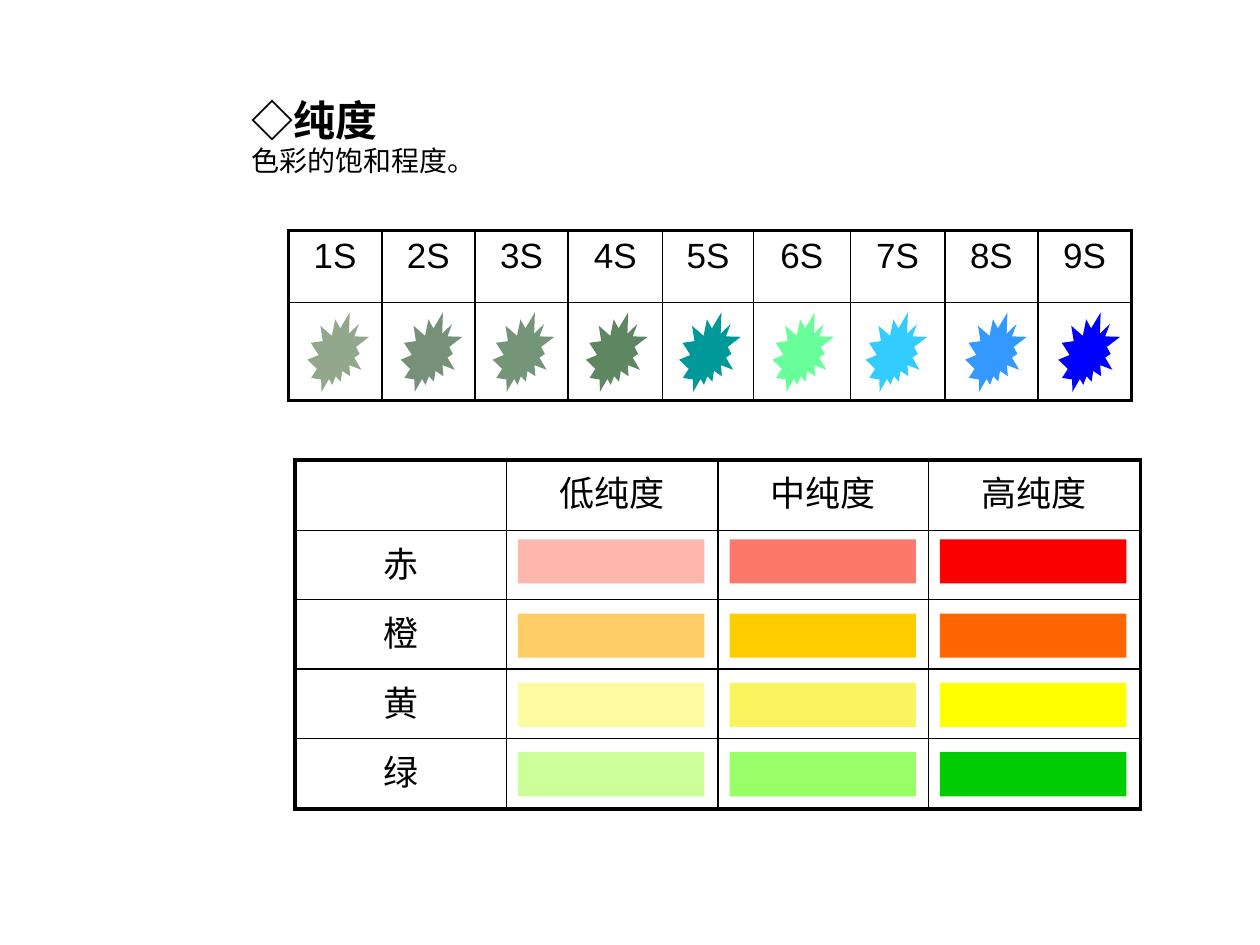
from dataclasses import dataclass

from lxml import etree
from pptx import Presentation
from pptx.dml.color import RGBColor
from pptx.enum.shapes import MSO_SHAPE
from pptx.enum.text import PP_ALIGN
from pptx.oxml.ns import qn
from pptx.util import Inches, Pt

CENTER = PP_ALIGN.CENTER
JUSTIFY = PP_ALIGN.JUSTIFY
SEAL = MSO_SHAPE.EXPLOSION2
RECTANGLE = MSO_SHAPE.RECTANGLE
THIN, THICK = Pt(1), Pt(2.25)
COLORS = {
    "ink": "000000",
    "1S": "92A78B", "2S": "76907A", "3S": "759578", "4S": "5E8660", "5S": "009999",
    "6S": "66FF99", "7S": "33CCFF", "8S": "3399FF", "9S": "0000FF",
    "赤低纯度": "FDB7AD", "赤中纯度": "FC786A", "赤高纯度": "FC0000",
    "橙低纯度": "FFCC66", "橙中纯度": "FFCC00", "橙高纯度": "FF6600",
    "黄低纯度": "FDFB9F", "黄中纯度": "F9F45D", "黄高纯度": "FFFF00",
    "绿低纯度": "CCFF99", "绿中纯度": "99FF66", "绿高纯度": "00CC00",
}
GRADES = [f"{grade}S" for grade in range(1, 10)]
LEVELS = ["低纯度", "中纯度", "高纯度"]
HUES = ["赤", "橙", "黄", "绿"]


@dataclass
class Grid:
    left: float
    top: float
    widths: list[float]
    heights: list[float]
    rows: list[list[str]]


@dataclass
class Heading:
    text: str
    size: int
    font: str
    bold: bool


def rgb(name: str) -> RGBColor:
    return RGBColor.from_string(COLORS[name])


def add_border(cell, side: str, width: int) -> None:
    line = etree.SubElement(cell._tc.get_or_add_tcPr(), qn(f"a:ln{side}"), w=str(width))
    fill = etree.SubElement(line, qn("a:solidFill"))
    etree.SubElement(fill, qn("a:srgbClr"), val=COLORS["ink"])


def add_grid(slide, grid: Grid) -> None:
    """Draw an unfilled table with a thick frame and thin inner rules."""
    last_row, last_column = len(grid.heights) - 1, len(grid.widths) - 1
    table = slide.shapes.add_table(
        last_row + 1, last_column + 1, Inches(grid.left), Inches(grid.top),
        Inches(sum(grid.widths)), Inches(sum(grid.heights))).table
    table.first_row = table.horz_banding = False
    for column, width in zip(table.columns, grid.widths):
        column.width = Inches(width)
    for row, height in zip(table.rows, grid.heights):
        row.height = Inches(height)
    for r, labels in enumerate(grid.rows):
        for c, label in enumerate(labels):
            cell = table.cell(r, c)
            outer_sides = {"L": c == 0, "R": c == last_column,
                           "T": r == 0, "B": r == last_row}
            for side, is_outer in outer_sides.items():
                add_border(cell, side, THICK if is_outer else THIN)
            cell.fill.background()
            if label:
                cell.text_frame.text = label
                paragraph = cell.text_frame.paragraphs[0]
                paragraph.alignment = CENTER
                font = paragraph.runs[0].font
                font.size, font.name = Pt(20), "Arial"
                font.color.rgb = rgb("ink")


def add_sample(slide, kind: MSO_SHAPE, left: float, top: float,
               width: float, height: float, color: str) -> None:
    sample = slide.shapes.add_shape(
        kind, Inches(left), Inches(top), Inches(width), Inches(height))
    sample.shadow.inherit = False
    sample.fill.solid()
    sample.fill.fore_color.rgb = rgb(color)
    sample.line.fill.background()


def add_headings(slide, headings: list[Heading]) -> None:
    frame = slide.shapes.add_textbox(
        Inches(1.9), Inches(0.75), Inches(7.38), Inches(0.84)).text_frame
    frame.word_wrap = True
    frame.text = "\n".join(heading.text for heading in headings)
    for index, (paragraph, heading) in enumerate(zip(frame.paragraphs, headings)):
        paragraph.alignment = JUSTIFY
        paragraph.line_spacing = 0.9
        if index:
            paragraph.space_before = Pt(1)
        font = paragraph.runs[0].font
        font.size, font.name, font.bold = Pt(heading.size), heading.font, heading.bold
        font.color.rgb = rgb("ink")


def main() -> None:
    prs = Presentation()
    prs.slide_width, prs.slide_height = Inches(10), Inches(7.5)
    slide = prs.slides.add_slide(prs.slide_layouts[6])

    add_headings(slide, [
        Heading("◇纯度", 24, "Calibri", True),
        Heading("色彩的饱和程度。", 16, "Noto Sans CJK SC", False),
    ])
    add_grid(slide, Grid(
        2.29, 1.83, [0.74, 0.74, 0.74, 0.75, 0.72, 0.77, 0.75, 0.74, 0.74],
        [0.57, 0.78], [GRADES, [""] * len(GRADES)]))
    add_grid(slide, Grid(
        2.34, 3.65, [1.68, 1.68, 1.67, 1.68], [0.56, 0.55, 0.55, 0.55, 0.56],
        [["", *LEVELS]] + [[hue, "", "", ""] for hue in HUES]))

    seal_lefts = [2.44, 3.18, 3.91, 4.65, 5.39, 6.13, 6.87, 7.66, 8.4]
    for grade, left in zip(GRADES, seal_lefts):
        add_sample(slide, SEAL, left, 2.48, 0.49, 0.63, grade)
    for hue, top in zip(HUES, [4.28, 4.87, 5.42, 5.97]):
        for level, left in zip(LEVELS, [4.11, 5.79, 7.46]):
            add_sample(slide, RECTANGLE, left, top, 1.48, 0.35, hue + level)

    prs.save("out.pptx")


if __name__ == "__main__":
    main()
